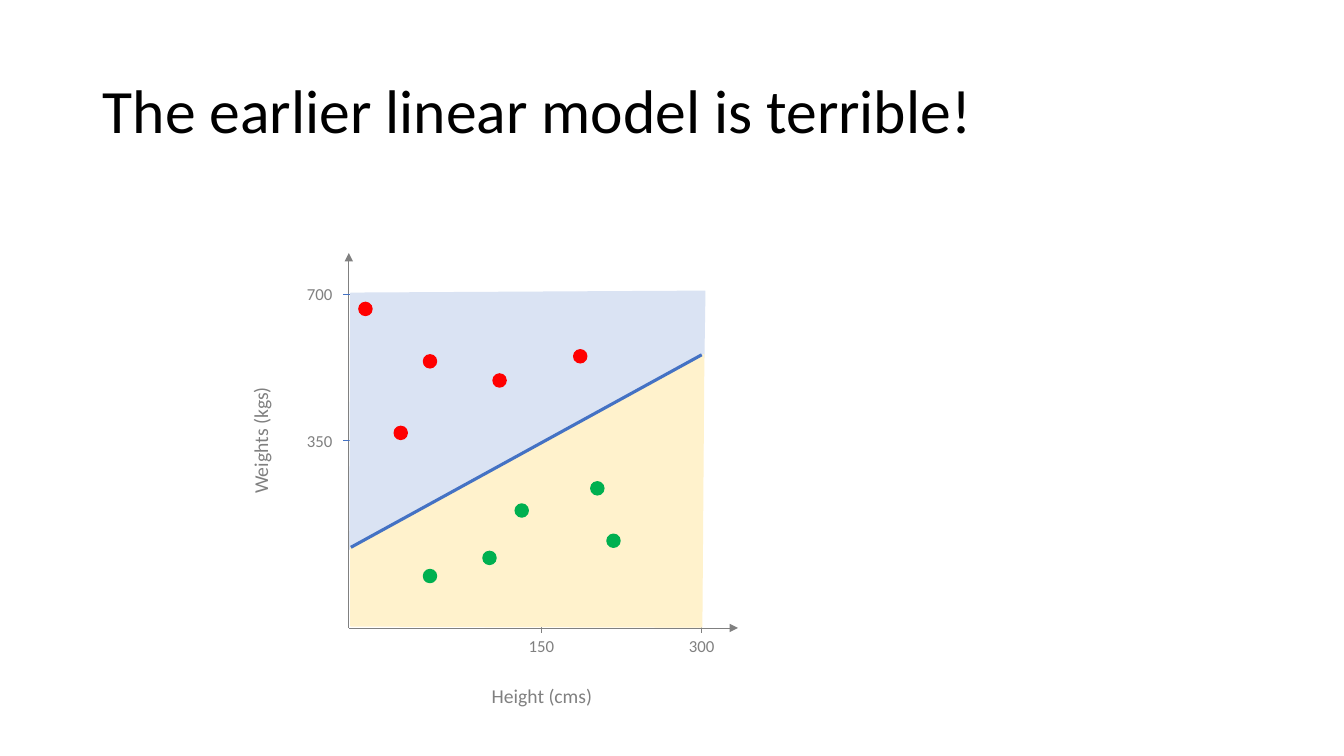
from lxml import etree
from pptx import Presentation
from pptx.dml.color import RGBColor
from pptx.enum.shapes import MSO_CONNECTOR as Connector, MSO_SHAPE as Shape
from pptx.enum.text import MSO_ANCHOR as Anchor, MSO_AUTO_SIZE as AutoSize, PP_ALIGN as Align
from pptx.oxml.ns import qn
from pptx.util import Inches, Pt

# Content
TITLE = "The earlier linear model is terrible!"
COLORS = {
    "black": "000000", "gray": "808080", "blue": "4472C4", "pale_blue": "DAE3F3",
    "pale_yellow": "FFF2CC", "red": "FF0000", "green": "00B050",
}
AXIS_TITLES = [  # text, left, top, width, rotation
    ("Height (cms)", 4.77, 6.74, 1.21, 0),
    ("Weights (kgs)", 1.95, 4.2, 1.27, 270),
]
HEIGHT_TICKS = [("300", 6.96), ("150", 5.37)]
WEIGHT_TICKS = [("700", 2.92), ("350", 4.37)]
BOUNDARY = [(3.48, 5.43), (6.96, 3.52)]
REGIONS = [  # colour, corners
    ("pale_blue", [(6.98, 3.55), (6.99, 2.89), (3.48, 2.91), (3.47, 5.45)]),
    ("pale_yellow", [(3.48, 5.43), (3.48, 6.21), (6.96, 6.22), (6.98, 3.52)]),
]
POINTS = {  # left and top of each dot
    "red": [(3.56, 3), (3.91, 4.23), (4.2, 3.52), (4.89, 3.71), (5.69, 3.47)],
    "green": [(5.86, 4.78), (6.02, 5.3), (4.79, 5.47), (5.11, 5), (4.2, 5.65)],
}

# Measures in inches
ORIGIN_X, ORIGIN_Y = 3.46, 6.23
AXIS_TOP, AXIS_RIGHT = 2.51, 7.32
HEIGHT_TICK, WEIGHT_TICK = 0.05, 0.06  # half lengths
LABEL_WIDTH, LABEL_HEIGHT = 0.46, 0.3
DOT = 0.13

presentation = Presentation()
presentation.slide_width, presentation.slide_height = Inches(13.33), Inches(7.5)
slide = presentation.slides.add_slide(presentation.slide_layouts[5])


def rgb(name):
    return RGBColor.from_string(COLORS[name])


def write(shape, text, size, color="gray", align=Align.CENTER, wrap=False,
          anchor=Anchor.TOP, auto_size=AutoSize.SHAPE_TO_FIT_TEXT, spacing=None):
    frame = shape.text_frame
    frame.word_wrap, frame.vertical_anchor, frame.auto_size = wrap, anchor, auto_size
    paragraph = frame.paragraphs[0]
    paragraph.alignment, paragraph.line_spacing = align, spacing
    run = paragraph.add_run()
    run.text = text
    run.font.name, run.font.size = "Calibri", Pt(size)
    run.font.color.rgb = rgb(color)


def add_label(text, left, top, width, height, size, rotation=0):
    box = slide.shapes.add_textbox(Inches(left), Inches(top), Inches(width), Inches(height))
    box.rotation = rotation
    write(box, text, size)


def add_line(start, end, color="gray", weight=0.5, arrow=False):
    line = slide.shapes.add_connector(
        Connector.STRAIGHT, *[Inches(value) for value in (*start, *end)])
    line.line.color.rgb, line.line.width = rgb(color), Pt(weight)
    properties = line.line._get_or_add_ln()
    if arrow:
        etree.SubElement(properties, qn("a:tailEnd"), type="triangle")
    etree.SubElement(properties.getparent(), qn("a:effectLst"))


def paint(shape, color):
    shape.shadow.inherit = False
    shape.fill.solid()
    shape.fill.fore_color.rgb = rgb(color)
    shape.line.color.rgb, shape.line.width = rgb(color), Pt(1)


# Axis titles
for text, left, top, width, rotation in AXIS_TITLES:
    add_label(text, left, top, width, 0.34, 14, rotation)

# Axes
for axis_end in [(ORIGIN_X, AXIS_TOP), (AXIS_RIGHT, ORIGIN_Y)]:
    add_line((ORIGIN_X, ORIGIN_Y), axis_end, arrow=True)

# Ticks with their labels
for text, x in HEIGHT_TICKS:
    add_line((x, ORIGIN_Y - HEIGHT_TICK), (x, ORIGIN_Y + HEIGHT_TICK))
    add_label(text, x - LABEL_WIDTH / 2, 6.26, LABEL_WIDTH, LABEL_HEIGHT, 12)
for text, y in WEIGHT_TICKS:
    add_line((ORIGIN_X + WEIGHT_TICK, y), (ORIGIN_X - WEIGHT_TICK, y), color="blue")
    add_label(text, ORIGIN_X - WEIGHT_TICK - LABEL_WIDTH, y - LABEL_HEIGHT / 2,
              LABEL_WIDTH, LABEL_HEIGHT, 12)

# Regions on both sides of the decision boundary
for color, corners in REGIONS:
    start, *others = [(Inches(x), Inches(y)) for x, y in corners]
    builder = slide.shapes.build_freeform(*start)
    builder.add_line_segments(others, close=True)
    paint(builder.convert_to_shape(), color)
add_line(*BOUNDARY, color="blue", weight=2.25)

# Data points
for color, places in POINTS.items():
    for left, top in places:
        dot = slide.shapes.add_shape(
            Shape.OVAL, Inches(left), Inches(top), Inches(DOT), Inches(DOT))
        paint(dot, color)

# Title
title = slide.shapes.title
title.left, title.top = Inches(0.92), Inches(0.4)
title.width, title.height = Inches(11.5), Inches(1.45)
write(title, TITLE, 44, color="black", align=Align.LEFT, wrap=True,
      anchor=Anchor.MIDDLE, auto_size=AutoSize.NONE, spacing=0.9)

presentation.save("out.pptx")
